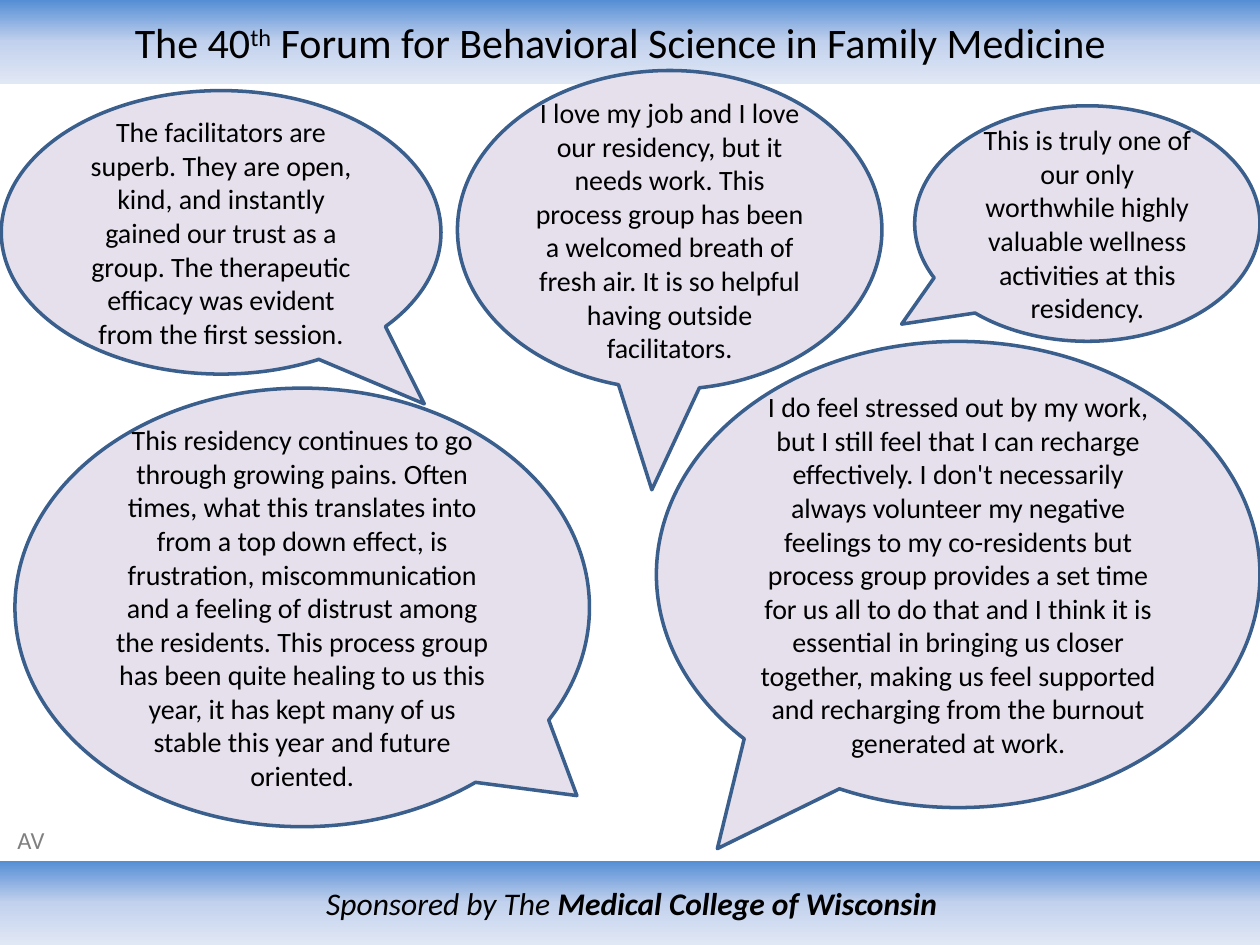
import copy

import pptx
import pptx.dml.color
import pptx.enum.shapes
import pptx.enum.text
import pptx.oxml.ns
import pptx.util

Pt = pptx.util.Pt
RGB = pptx.dml.color.RGBColor.from_string
SHAPE = pptx.enum.shapes.MSO_SHAPE
ALIGN = pptx.enum.text.PP_ALIGN
ANCHOR = pptx.enum.text.MSO_ANCHOR

THEME = {
    "font": "Calibri",
    "ink": RGB("000000"),
    "initials": RGB("808080"),
    "bubble": RGB("E6E0EC"),
    "outline": RGB("3A5F8C"),
    "gradient": [(0, RGB("558ED5")), (0.5, RGB("C2D1ED")), (1, RGB("E1E8F5"))],
    "title_size": Pt(24),
    "sponsor_size": Pt(18),
    "quote_size": Pt(16),
    "initials_size": Pt(14),
}


def write(shape, runs, size, color, align, frame_format):
    for key, value in frame_format.items():
        setattr(shape.text_frame, key, value)
    paragraph = shape.text_frame.paragraphs[0]
    paragraph.alignment = align
    for text, extra in runs:
        run = paragraph.add_run()
        run.text = text
        run.font.color.rgb = color
        for key, value in {"name": THEME["font"], "size": size, **extra}.items():
            setattr(run.font, key, value)
    return paragraph


def add_shape(kind, left, top, width, height):
    shape = slide.shapes.add_shape(kind, Pt(left), Pt(top), Pt(width), Pt(height))
    shape.shadow.inherit = False
    return shape


deck = pptx.Presentation()
deck.slide_width, deck.slide_height = Pt(720), Pt(540)
slide = deck.slides.add_slide(deck.slide_layouts[6])

centred = {"word_wrap": True, "vertical_anchor": ANCHOR.MIDDLE}
title_runs = [("The 40", {}), ("th", {}),
              (" Forum for Behavioral Science in Family Medicine", {})]
sponsor_runs = [("Sponsored by The ", {"italic": True}),
                ("Medical College of Wisconsin", {"italic": True, "bold": True})]
bands = [
    (0, 720, title_runs, THEME["title_size"], Pt(18)),
    (492, 722, sponsor_runs, THEME["sponsor_size"], Pt(7.2)),
]
band_paragraphs = []
for top, width, runs, size, right_inset in bands:
    band = add_shape(SHAPE.RECTANGLE, 0, top, width, 48)
    band.line.fill.background()
    band.fill.gradient()
    band.fill.gradient_angle = 270
    stops = band._element.spPr.find(".//" + pptx.oxml.ns.qn("a:gsLst"))
    stops.insert(1, copy.deepcopy(stops[0]))
    for stop, (position, color) in zip(band.fill.gradient_stops, THEME["gradient"]):
        stop.position = position
        stop.color.rgb = color
    band_paragraphs.append(write(band, runs, size, THEME["ink"], ALIGN.CENTER,
                                 {**centred, "margin_right": right_inset}))

ordinal = band_paragraphs[0].runs[1]
ordinal._r.get_or_add_rPr().set("baseline", "30000")

quotes = [
    ((0.7, 51.8, 251.3, 162), (0.462, 0.605),
     "The facilitators are superb. They are open, kind, and instantly gained our "
     "trust as a group. The therapeutic efficacy was evident from the first session."),
    ((375.1, 195.1, 344.9, 266.4), (-0.399, 0.588),
     "I do feel stressed out by my work, but I still feel that I can recharge "
     "effectively. I don't necessarily always volunteer my negative feelings to my "
     "co-residents but process group provides a set time for us all to do that and I "
     "think it is essential in bringing us closer together, making us feel supported "
     "and recharging from the burnout generated at work."),
    ((522.7, 60.5, 197.3, 134.6), (-0.538, 0.427),
     "This is truly one of our only worthwhile highly valuable wellness activities "
     "at this residency."),
    ((8.6, 221.8, 328.3, 250.6), (0.478, 0.429),
     "This residency continues to go through growing pains. Often times, what this "
     "translates into from a top down effect, is frustration, miscommunication and a "
     "feeling of distrust among the residents. This process group has been quite "
     "healing to us this year, it has kept many of us stable this year and future "
     "oriented."),
    ((261.4, 40.3, 242.6, 182.2), (-0.042, 0.815),
     "I love my job and I love our residency, but it needs work. This process group "
     "has been a welcomed breath of fresh air. It is so helpful having outside "
     "facilitators."),
]
for bounds, tail, quote in quotes:
    bubble = add_shape(SHAPE.OVAL_CALLOUT, *bounds)
    bubble.adjustments[0], bubble.adjustments[1] = tail
    bubble.fill.solid()
    bubble.fill.fore_color.rgb = THEME["bubble"]
    bubble.line.color.rgb = THEME["outline"]
    bubble.line.width = Pt(2)
    write(bubble, [(quote, {})], THEME["quote_size"], THEME["ink"], ALIGN.CENTER, centred)

initials = slide.shapes.add_textbox(Pt(2.9), Pt(468), Pt(38.9), Pt(24.5))
write(initials, [("AV", {})], THEME["initials_size"], THEME["initials"], ALIGN.LEFT,
      {"word_wrap": True, "auto_size": pptx.enum.text.MSO_AUTO_SIZE.SHAPE_TO_FIT_TEXT})

deck.save("out.pptx")
